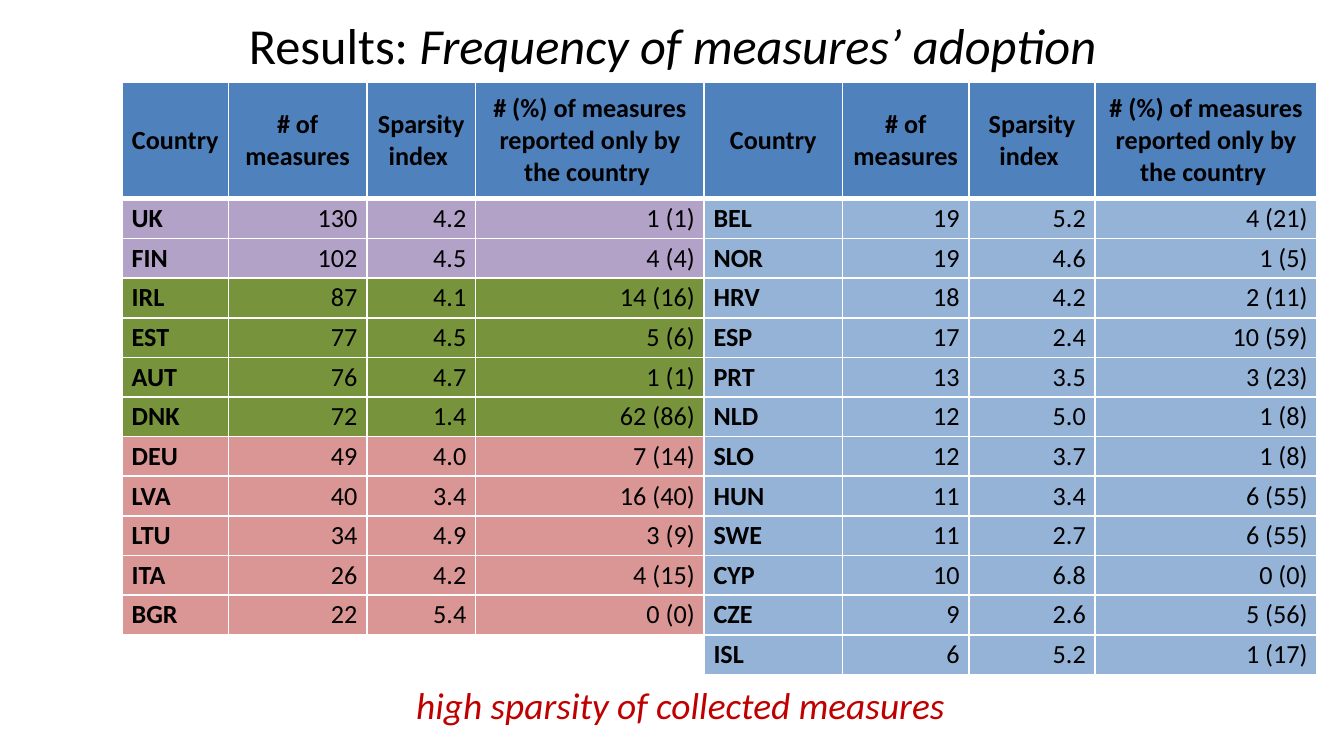
from lxml import etree
from pptx import Presentation
from pptx.dml.color import RGBColor
from pptx.enum.shapes import MSO_SHAPE
from pptx.enum.text import MSO_ANCHOR, PP_ALIGN
from pptx.oxml.ns import qn
from pptx.util import Inches, Pt

RECTANGLE = MSO_SHAPE.RECTANGLE
MIDDLE = MSO_ANCHOR.MIDDLE
LEFT, CENTER, RIGHT = PP_ALIGN.LEFT, PP_ALIGN.CENTER, PP_ALIGN.RIGHT

BLACK = RGBColor(0x00, 0x00, 0x00)
WHITE = RGBColor(0xFF, 0xFF, 0xFF)
RED = RGBColor(0xC0, 0x00, 0x00)
HEADER_BLUE = RGBColor(0x4F, 0x81, 0xBD)
LIGHT_BLUE = RGBColor(0x95, 0xB3, 0xD7)
PURPLE = RGBColor(0xB3, 0xA2, 0xC7)
GREEN = RGBColor(0x77, 0x93, 0x3C)
PINK = RGBColor(0xD9, 0x96, 0x94)

FONT = "Calibri"
CELL_SIZE = 14

# Table content: country, measures, sparsity, reported only by the country
HEADINGS = ["Country", "# of measures", "Sparsity index ",
            "# (%) of measures reported only by the country "]
LEFT_GROUPS = [
    (PURPLE, [("UK", "130", "4.2", "1 (1)"),
              ("FIN", "102", "4.5", "4 (4)")]),
    (GREEN, [("IRL", "87", "4.1", "14 (16)"),
             ("EST", "77", "4.5", "5 (6)"),
             ("AUT", "76", "4.7", "1 (1)"),
             ("DNK", "72", "1.4", "62 (86)")]),
    (PINK, [("DEU", "49", "4.0", "7 (14)"),
            ("LVA", "40", "3.4", "16 (40)"),
            ("LTU", "34", "4.9", "3 (9)"),
            ("ITA", "26", "4.2", "4 (15)"),
            ("BGR", "22", "5.4", "0 (0)")]),
    (None, [("", "", "", "")]),
]
RIGHT_GROUPS = [
    (LIGHT_BLUE, [("BEL", "19", "5.2", "4 (21)"),
                  ("NOR", "19", "4.6", "1 (5)"),
                  ("HRV", "18", "4.2", "2 (11)"),
                  ("ESP", "17", "2.4", "10 (59)"),
                  ("PRT", "13", "3.5", "3 (23)"),
                  ("NLD", "12", "5.0", "1 (8)"),
                  ("SLO", "12", "3.7", "1 (8)"),
                  ("HUN", "11", "3.4", "6 (55)"),
                  ("SWE", "11", "2.7", "6 (55)"),
                  ("CYP", "10", "6.8", "0 (0)"),
                  ("CZE", "9", "2.6", "5 (56)"),
                  ("ISL", "6", "5.2", "1 (17)")]),
]
COLUMN_WIDTHS = [0.79, 1.03, 0.81, 1.7, 1.03, 0.94, 0.94, 1.65]
HEADER_HEIGHT = 0.87


def write(para, text, size=CELL_SIZE, color=BLACK, bold=False, italic=False,
          align=LEFT):
    para.alignment = align
    span = para.add_run()
    span.text = text
    font = span.font
    font.name, font.size, font.color.rgb = FONT, Pt(size), color
    font.bold, font.italic = bold, italic


def colored_rows(groups):
    """Flatten the groups into one list of (text, fill) cells per row."""
    return [[(text, color) for text in row]
            for color, rows in groups for row in rows]


class SlideBuilder:
    def __init__(self, deck):
        self.slide = deck.slides.add_slide(deck.slide_layouts[5])

    def title(self, parts, left, top, width, height):
        box = self.slide.shapes.title
        box.left, box.top = Inches(left), Inches(top)
        box.width, box.height = Inches(width), Inches(height)
        frame = box.text_frame
        frame.vertical_anchor = MIDDLE
        frame.margin_left = frame.margin_right = Inches(0.07)
        frame.margin_top = frame.margin_bottom = Inches(0.04)
        for text, italic in parts:
            write(frame.paragraphs[0], text, size=27, italic=italic, align=CENTER)

    def caption(self, text, left, top, width, height):
        box = self.slide.shapes.add_shape(
            RECTANGLE, Inches(left), Inches(top), Inches(width), Inches(height))
        box.shadow.inherit = False
        box.fill.solid()
        box.fill.fore_color.rgb = WHITE
        box.line.fill.background()
        box.text_frame.word_wrap = True
        write(box.text_frame.paragraphs[0], text, size=20, color=RED,
              italic=True, align=CENTER)

    def borders(self, cell, top=1, bottom=1):
        properties = cell._tc.get_or_add_tcPr()
        for side, points in (("L", 1), ("R", 1), ("T", top), ("B", bottom)):
            line = etree.SubElement(properties, qn(f"a:ln{side}"), w=str(Pt(points)))
            fill = etree.SubElement(line, qn("a:solidFill"))
            etree.SubElement(fill, qn("a:srgbClr"), val=str(WHITE))

    def cell(self, cell, text, color, header, label, top=1):
        self.borders(cell, top=top, bottom=3 if header else 1)
        cell.vertical_anchor = MIDDLE
        cell.margin_left = cell.margin_right = Inches(0.07)
        cell.margin_top = cell.margin_bottom = 0
        para = cell.text_frame.paragraphs[0]
        if color is None:
            cell.fill.background()
            # Keeps an empty cell from stretching its row
            etree.SubElement(para._p, qn("a:endParaRPr"), sz=str(CELL_SIZE * 100))
            return
        cell.fill.solid()
        cell.fill.fore_color.rgb = color
        align = CENTER if header else LEFT if label else RIGHT
        write(para, text, bold=header or label, align=align)

    def table(self, rows, left, top, width, height):
        table = self.slide.shapes.add_table(
            len(rows), len(COLUMN_WIDTHS), Inches(left), Inches(top),
            Inches(width), Inches(height)).table
        for column, column_width in zip(table.columns, COLUMN_WIDTHS):
            column.width = Inches(column_width)
        body_height = (height - HEADER_HEIGHT) / (len(rows) - 1)
        for r, row in enumerate(rows):
            table.rows[r].height = Inches(body_height if r else HEADER_HEIGHT)
            for c, (text, color) in enumerate(row):
                self.cell(table.cell(r, c), text, color, header=r == 0,
                          label=c % len(HEADINGS) == 0, top=3 if r == 1 else 1)


def main():
    # Widescreen 16:9 page
    deck = Presentation()
    deck.slide_width = Inches(10)
    deck.slide_height = Inches(10 * 9 / 16)
    page = SlideBuilder(deck)

    # Title and conclusion
    page.title([("Results: ", False), ("Frequency of measures’ adoption", True)],
               0.28, 0.09, 9.45, 0.48)
    page.caption("high sparsity of collected measures ", 0.39, 5.02, 9.41, 0.44)

    # Two country lists side by side in one table
    header = [(text, HEADER_BLUE) for text in HEADINGS * 2]
    body = [first + second for first, second in
            zip(colored_rows(LEFT_GROUPS), colored_rows(RIGHT_GROUPS))]
    page.table([header] + body, 0.91, 0.61, 8.9, 4.41)

    deck.save("out.pptx")


if __name__ == "__main__":
    main()
